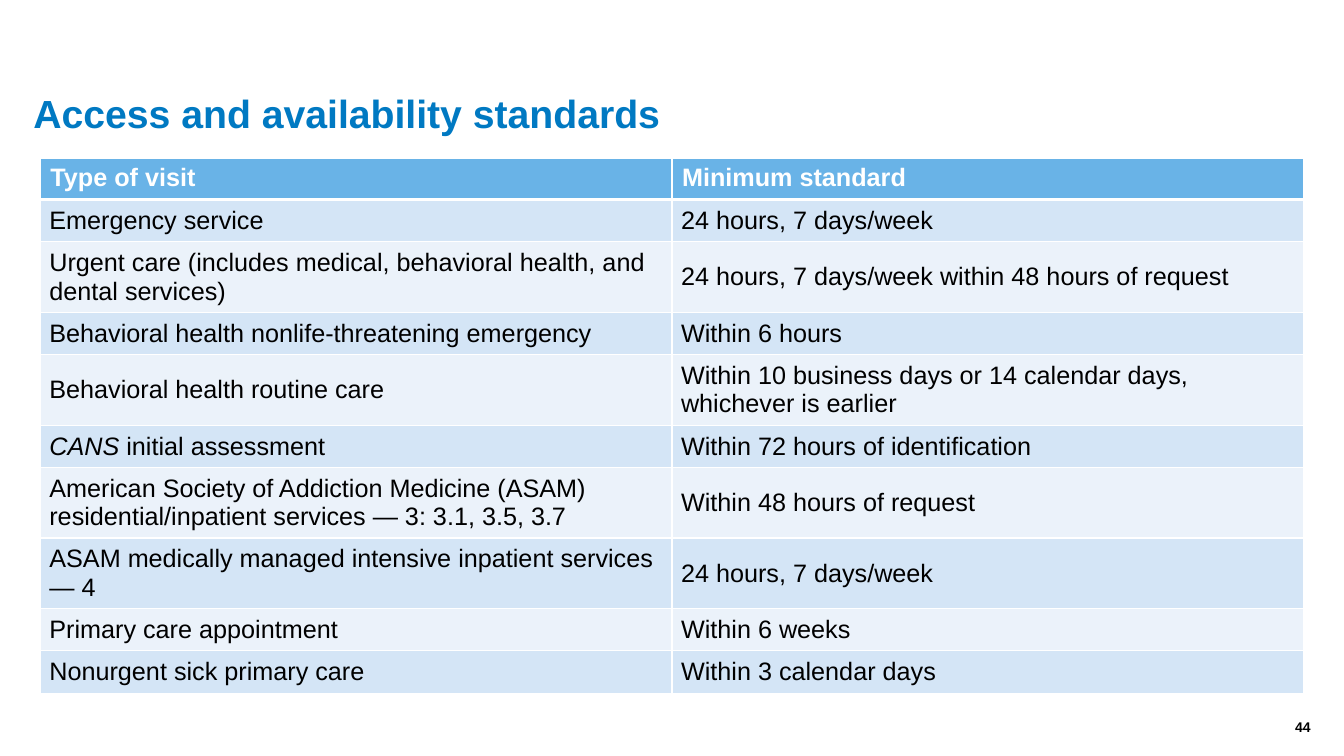
from lxml import etree
from pptx import Presentation
from pptx import util as u
from pptx.dml.color import RGBColor
from pptx.enum import text
from pptx.oxml import ns

PX = 9144  # EMU per px, 100 px to the inch
FONT = "Arial"
BLUE = RGBColor(0x00, 0x79, 0xC2)
HEADER_BLUE = RGBColor(0x69, 0xB3, 0xE7)
BAND_DARK = RGBColor(0xD4, 0xE5, 0xF6)
BAND_LIGHT = RGBColor(0xEB, 0xF2, 0xFA)
WHITE = RGBColor(0xFF, 0xFF, 0xFF)
BLACK = RGBColor(0x00, 0x00, 0x00)

HEADERS = ("Type of visit", "Minimum standard")
ITALIC_TERM = "CANS"
STANDARDS = [
    ("Emergency service", "24 hours, 7 days/week"),
    ("Urgent care (includes medical, behavioral health, and dental services)",
     "24 hours, 7 days/week within 48 hours of request"),
    ("Behavioral health nonlife‑threatening emergency", "Within 6 hours"),
    ("Behavioral health routine care",
     "Within 10 business days or 14 calendar days, whichever is earlier"),
    ("CANS initial assessment", "Within 72 hours of identification"),
    ("American Society of Addiction Medicine (ASAM) residential/inpatient "
     "services — 3: 3.1, 3.5, 3.7", "Within 48 hours of request"),
    ("ASAM medically managed intensive inpatient services — 4",
     "24 hours, 7 days/week"),
    ("Primary care appointment", "Within 6 weeks"),
    ("Nonurgent sick primary care", "Within 3 calendar days"),
]


def px(*lengths):
    return [u.Emu(length * PX) for length in lengths]


def style(para, size, color, bold=False):
    font = para.font
    font.name, font.size, font.bold = FONT, u.Pt(size), bold
    font.color.rgb = color


def fill_frame(shape, words, anchor, size, color, align):
    frame = shape.text_frame
    frame.word_wrap = True
    frame.auto_size = text.MSO_AUTO_SIZE.NONE
    frame.margin_left = frame.margin_right = 0
    frame.margin_top = frame.margin_bottom = 0
    frame.vertical_anchor = anchor
    para = frame.paragraphs[0]
    para.text = words
    para.alignment = align
    style(para, size, color, bold=True)


def add_title(page, words):
    title = page.shapes.title
    title.left, title.top, title.width, title.height = px(33, 62, 1260, 100)
    fill_frame(title, words, text.MSO_ANCHOR.MIDDLE, 28, BLUE, text.PP_ALIGN.LEFT)


def add_page_number(page, number):
    box = page.shapes.add_textbox(*px(1233, 710, 67, 20))
    fill_frame(box, number, text.MSO_ANCHOR.BOTTOM, 10, BLACK, text.PP_ALIGN.RIGHT)


def set_borders(cell, top, bottom):
    props = cell._tc.get_or_add_tcPr()
    for side, points in (("L", 1), ("R", 1), ("T", top), ("B", bottom)):
        line = etree.SubElement(props, ns.qn(f"a:ln{side}"), w=str(u.Pt(points)))
        paint = etree.SubElement(line, ns.qn("a:solidFill"))
        etree.SubElement(paint, ns.qn("a:srgbClr"), val=str(WHITE))


def fill_cell(cell, words, row):
    # The rule below the header is thicker than the others
    set_borders(cell, 3 if row == 1 else 1, 3 if row == 0 else 1)
    cell.fill.solid()
    para = cell.text_frame.paragraphs[0]
    if row == 0:
        cell.fill.fore_color.rgb = HEADER_BLUE
        para.text = words
        style(para, 18, WHITE, bold=True)
        return
    cell.fill.fore_color.rgb = BAND_DARK if row % 2 else BAND_LIGHT
    cell.vertical_anchor = text.MSO_ANCHOR.MIDDLE
    cell.margin_left, cell.margin_top, cell.margin_right, cell.margin_bottom = px(9, 7, 5, 7)
    if words.startswith(ITALIC_TERM):
        span = para.add_run()
        span.text = ITALIC_TERM
        span.font.italic = True
        words = words[len(ITALIC_TERM):]
    para.add_run().text = words
    style(para, 18, BLACK)


def add_standards_table(page):
    rows = [HEADERS, *STANDARDS]
    place = px(40, 157, 1253, 41 * len(rows))
    table = page.shapes.add_table(len(rows), len(HEADERS), *place).table
    for row, entries in enumerate(rows):
        for column, words in enumerate(entries):
            fill_cell(table.cell(row, column), words, row)


def main():
    deck = Presentation()
    deck.slide_width, deck.slide_height = px(1333, 750)
    page = deck.slides.add_slide(deck.slide_layouts[5])
    add_title(page, "Access and availability standards")
    add_standards_table(page)
    add_page_number(page, "44")
    deck.save("out.pptx")


if __name__ == "__main__":
    main()
